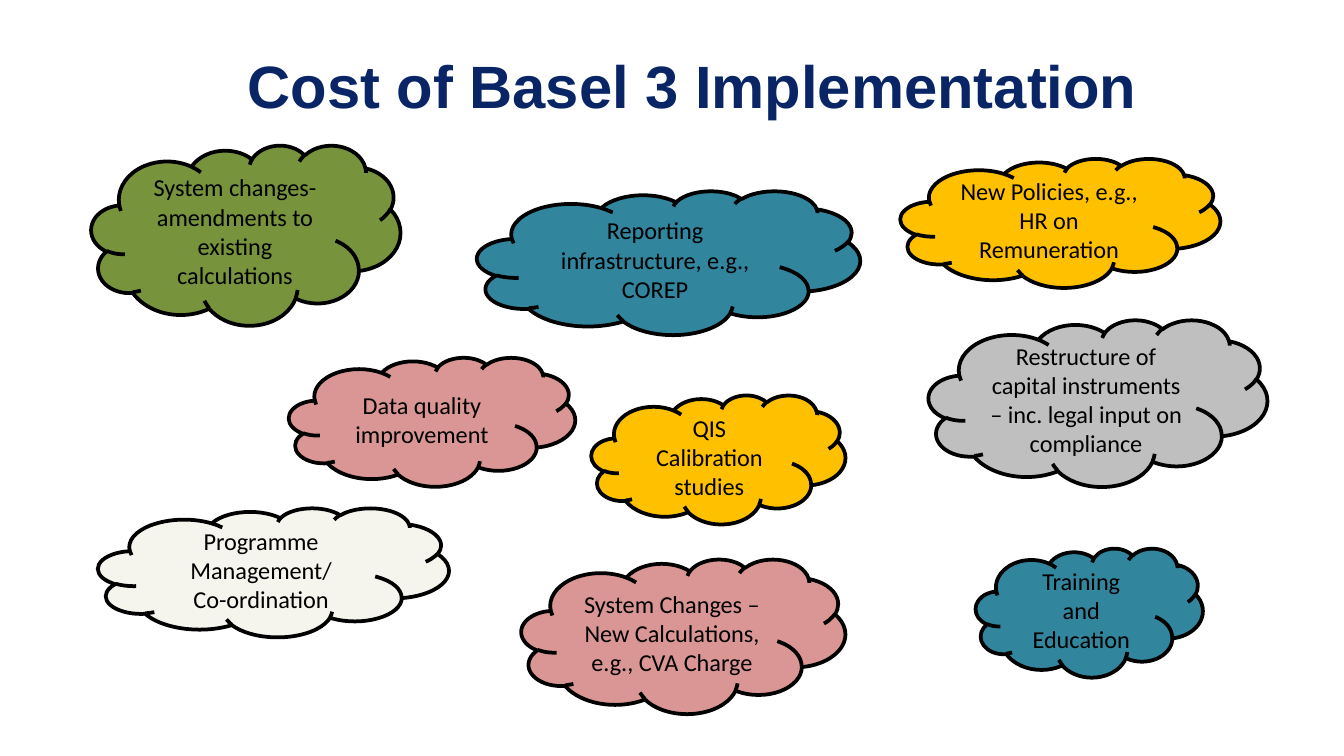
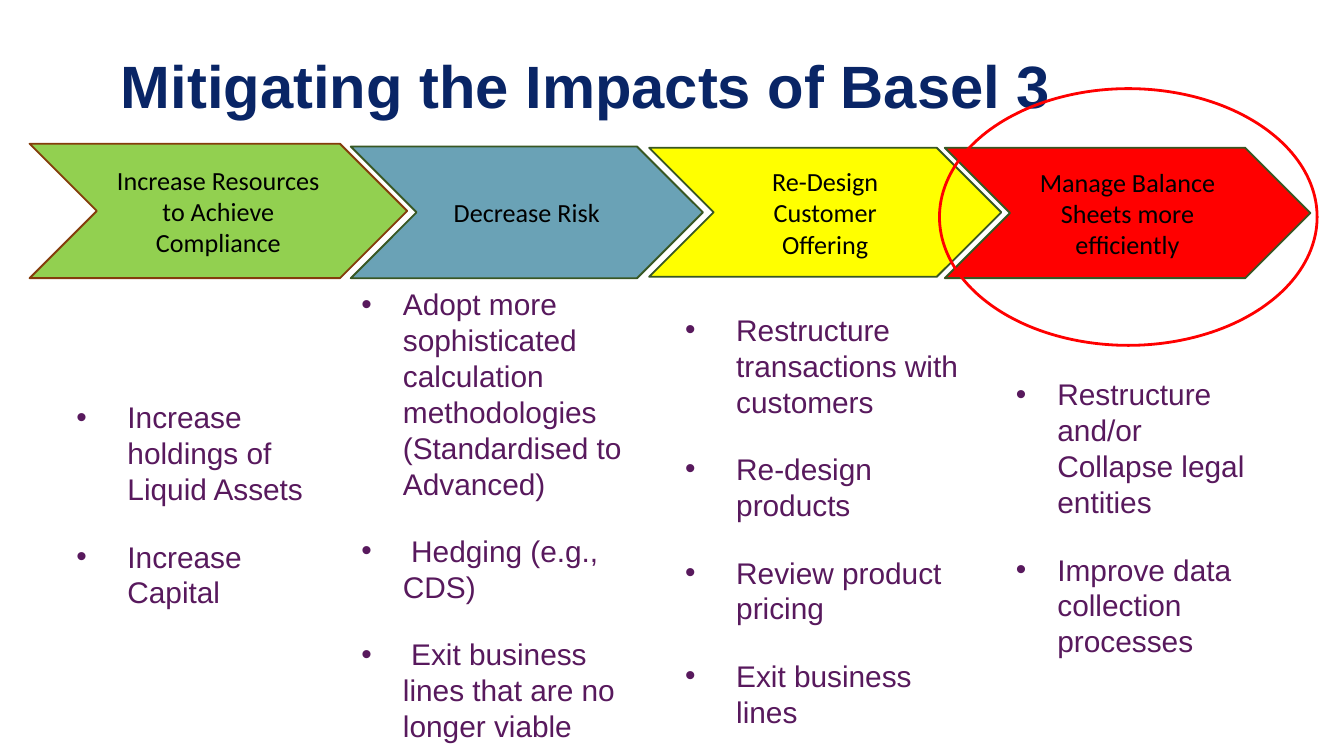
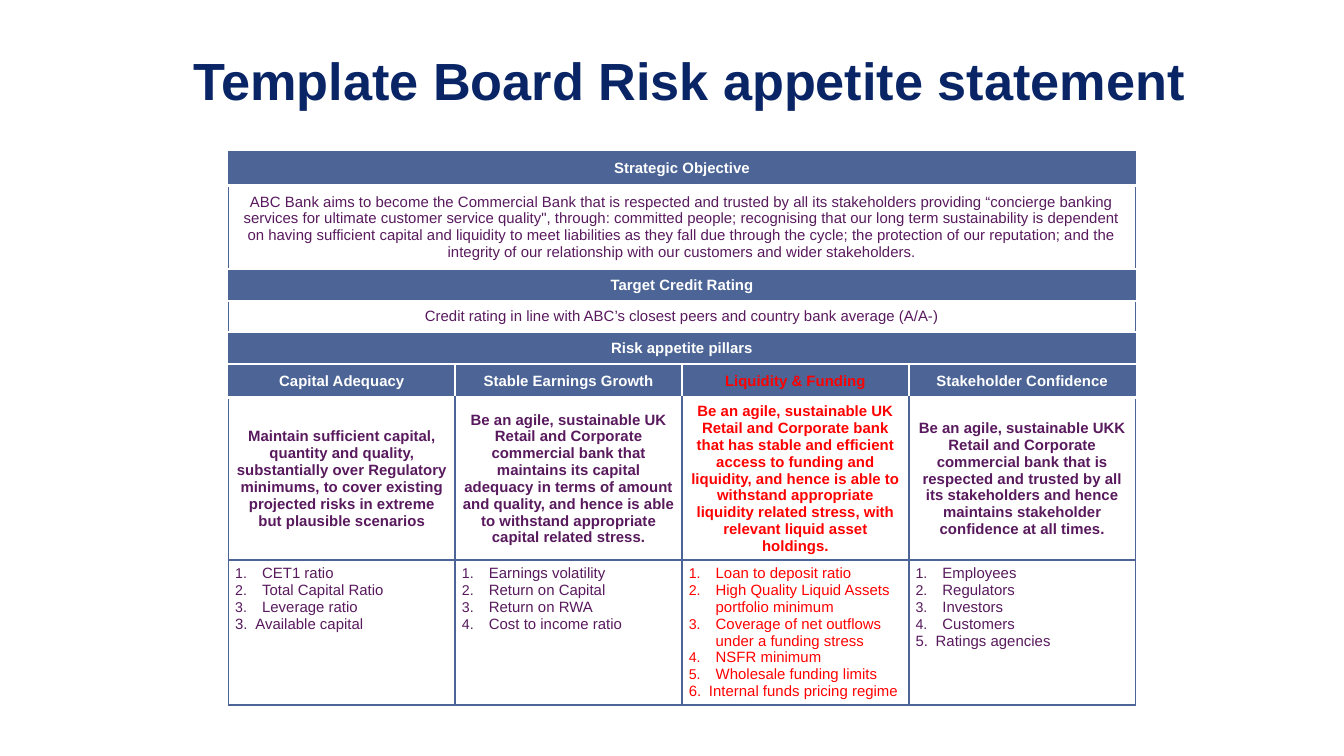
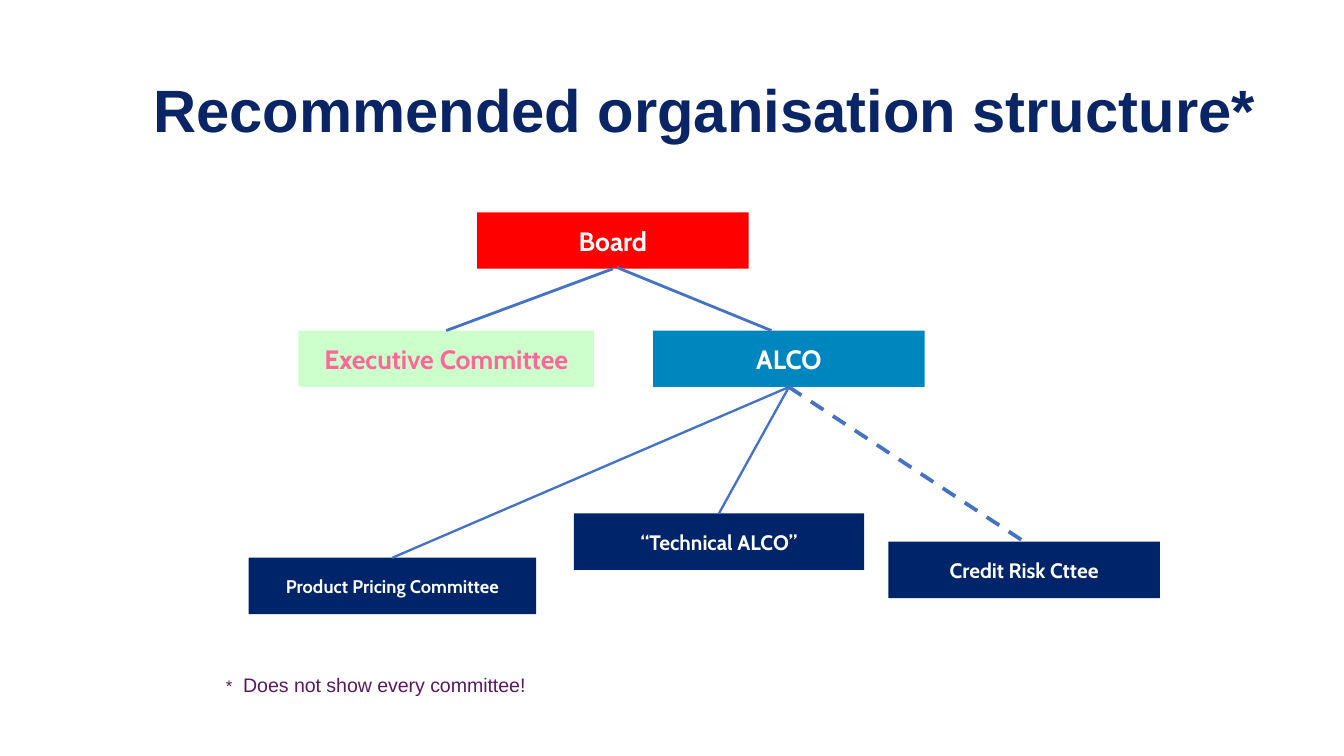
from typing import NamedTuple, Optional

from lxml.etree import SubElement
from pptx import Presentation
from pptx.dml.color import RGBColor
from pptx.enum.dml import MSO_LINE
from pptx.enum.shapes import MSO_CONNECTOR, MSO_SHAPE
from pptx.enum.text import MSO_ANCHOR, MSO_AUTO_SIZE, PP_ALIGN
from pptx.oxml.ns import qn
from pptx.util import Inches, Pt

# Colours and fonts
BLACK = RGBColor(0x00, 0x00, 0x00)
WHITE = RGBColor(0xFF, 0xFF, 0xFF)
RED = RGBColor(0xFF, 0x00, 0x00)
NAVY = RGBColor(0x09, 0x25, 0x66)
PLUM = RGBColor(0x58, 0x19, 0x5D)
SLATE = RGBColor(0x4C, 0x65, 0x96)
OLIVE = RGBColor(0x77, 0x93, 0x3C)
TEAL = RGBColor(0x31, 0x85, 0x9C)
AMBER = RGBColor(0xFF, 0xC0, 0x00)
ROSE = RGBColor(0xD9, 0x96, 0x94)
GREY = RGBColor(0xBF, 0xBF, 0xBF)
CREAM = RGBColor(0xF5, 0xF4, 0xED)
LIME = RGBColor(0x92, 0xD0, 0x50)
STEEL = RGBColor(0x6A, 0xA2, 0xB6)
YELLOW = RGBColor(0xFF, 0xFF, 0x00)
BROWN = RGBColor(0x84, 0x3C, 0x0B)
FOREST = RGBColor(0x38, 0x57, 0x23)
BLUE = RGBColor(0x00, 0x86, 0xBF)
INK = RGBColor(0x00, 0x24, 0x69)
MINT = RGBColor(0xCC, 0xFF, 0xCC)
PINK = RGBColor(0xFF, 0x66, 0x99)
SNOW = RGBColor(0xFD, 0xFD, 0xFE)
LINK = RGBColor(0x44, 0x72, 0xC4)
ARIAL, CALIBRI, CABIN = "Arial", "Calibri", "Cabin"


class Box(NamedTuple):
    left: float
    top: float
    width: float
    height: float


class Style(NamedTuple):
    size: float
    color: RGBColor
    font: str = ARIAL
    bold: bool = False


class Label(NamedTuple):
    text: str
    box: Box
    fill: RGBColor
    edge: Optional[RGBColor] = BLACK


class Points(NamedTuple):
    box: Box
    indent: float
    items: list


class Node(NamedTuple):
    text: str
    box: Box
    fill: RGBColor
    size: float
    color: RGBColor = SNOW


class Pillar(NamedTuple):
    name: str
    aim: str
    items: list
    typed: str = ""
    color: RGBColor = PLUM


def place(box: Box) -> list:
    return [Inches(side) for side in box]


def style_run(run, style: Style) -> None:
    font = run.font
    font.name, font.size, font.bold = style.font, Pt(style.size), style.bold
    font.color.rgb = style.color


def write(frame, text: str, style: Style, align=PP_ALIGN.CENTER) -> None:
    frame.text = text
    for para in frame.paragraphs:
        para.alignment = align
        for run in para.runs:
            style_run(run, style)


def hang(para, indent: float) -> object:
    props = para._p.get_or_add_pPr()
    props.set("marL", str(Inches(indent)))
    props.set("indent", str(-Inches(indent)))
    return props


def add_page(deck, text: str, box: Box, size: float = 32,
             align=PP_ALIGN.CENTER, space: float = 1.0):
    slide = deck.slides.add_slide(deck.slide_layouts[5])
    title = slide.shapes.title
    title.left, title.top, title.width, title.height = place(box)
    frame = title.text_frame
    write(frame, text, Style(size, NAVY, bold=True), align)
    frame.word_wrap, frame.auto_size = True, MSO_AUTO_SIZE.NONE
    frame.vertical_anchor = MSO_ANCHOR.MIDDLE
    frame.paragraphs[0].line_spacing = space
    return slide


def add_form(slide, kind, box: Box, fill=None, edge=None, width: float = 1):
    form = slide.shapes.add_shape(kind, *place(box))
    form.shadow.inherit = False
    if fill is None:
        form.fill.background()
    else:
        form.fill.solid()
        form.fill.fore_color.rgb = fill
    if edge is None:
        form.line.fill.background()
    else:
        form.line.color.rgb, form.line.width = edge, Pt(width)
    return form


def add_label(slide, kind, label: Label, size: float, width: float) -> None:
    form = add_form(slide, kind, label.box, label.fill, label.edge, width)
    frame = form.text_frame
    frame.word_wrap, frame.vertical_anchor = True, MSO_ANCHOR.MIDDLE
    frame.margin_left = frame.margin_right = Inches(0.11)
    write(frame, label.text, Style(size, BLACK, CALIBRI))


# Slide 1: cost clouds
CLOUDS = [
    Label("System changes- amendments to existing calculations",
          Box(0.68, 1.08, 2.3, 1.34), OLIVE),
    Label("Reporting infrastructure, e.g., COREP",
          Box(3.55, 1.42, 2.85, 1.07), TEAL),
    Label("New Policies, e.g., HR on Remuneration",
          Box(6.7, 1.18, 2.38, 0.96), AMBER),
    Label("Data quality improvement", Box(2.15, 2.66, 2.13, 0.96), ROSE),
    Label("QIS Calibration studies", Box(4.4, 2.94, 1.89, 0.96), AMBER),
    Label("Restructure of capital instruments – inc. legal input on compliance",
          Box(6.91, 2.38, 2.52, 1.24), GREY),
    Label("Programme Management/\nCo-ordination",
          Box(0.73, 3.78, 2.61, 0.96), CREAM),
    Label("System Changes – New Calculations, e.g., CVA Charge",
          Box(3.88, 4.16, 2.41, 1.15), ROSE),
    Label("Training and Education", Box(7.26, 4.08, 1.69, 0.96), TEAL),
]


def draw_costs(deck) -> None:
    slide = add_page(deck, "Cost of Basel 3 Implementation",
                     Box(0.11, 0.31, 10.09, 0.64))
    for cloud in CLOUDS:
        add_label(slide, MSO_SHAPE.CLOUD, cloud, 13, 2)


# Slide 2: chevrons and their bullet lists
STEPS = [
    Label("Increase Resources to Achieve Compliance",
          Box(0.22, 1.07, 2.81, 1), LIME, BROWN),
    Label("Decrease Risk", Box(2.61, 1.09, 2.62, 0.98), STEEL, FOREST),
    Label("Re-Design Customer Offering",
          Box(4.83, 1.1, 2.62, 0.96), YELLOW, FOREST),
    Label("Manage Balance Sheets more efficiently",
          Box(7.03, 1.1, 2.72, 0.97), RED, FOREST),
]
LISTS = [
    Points(Box(0.47, 2.92, 2.12, 1.72), 0.38,
           ["Increase holdings of Liquid Assets", "Increase Capital"]),
    Points(Box(2.59, 2.08, 2.32, 3.6), 0.31,
           ["Adopt more sophisticated calculation methodologies "
            "(Standardised to Advanced)",
            " Hedging (e.g., CDS)",
            " Exit business lines that are no longer viable"]),
    Points(Box(5, 2.27, 2.23, 3.33), 0.38,
           ["Restructure transactions with customers", "Re-design products",
            "Review product pricing", "Exit business lines"]),
    Points(Box(7.46, 2.75, 2.04, 2.26), 0.31,
           ["Restructure and/or Collapse legal entities",
            "Improve data collection processes"]),
]


def add_points(slide, points: Points) -> None:
    frame = slide.shapes.add_textbox(*place(points.box)).text_frame
    frame.word_wrap = True
    write(frame, "\n".join(points.items), Style(16, PLUM), PP_ALIGN.LEFT)
    for rank, para in enumerate(frame.paragraphs):
        props = hang(para, points.indent)
        SubElement(props, qn("a:buFont")).set("typeface", ARIAL)
        SubElement(props, qn("a:buChar")).set("char", "•")
        para.space_before = Pt(17 if rank else 0)


def draw_steps(deck) -> None:
    slide = add_page(deck, "Mitigating the Impacts of Basel 3",
                     Box(0.8, 0.31, 9.39, 0.64), align=PP_ALIGN.LEFT)
    for step in STEPS:
        add_label(slide, MSO_SHAPE.CHEVRON, step, 14, 1)
    add_form(slide, MSO_SHAPE.OVAL, Box(6.99, 0.66, 2.81, 1.91), None, RED, 1.5)
    for points in LISTS:
        add_points(slide, points)


# Slide 3: risk appetite table
BANDS = [
    ("Strategic Objective", True),
    ("ABC Bank aims to become the Commercial Bank that is respected and "
     "trusted by all its stakeholders providing “concierge banking services "
     "for ultimate customer service quality\", through: committed people; "
     "recognising that our long term sustainability is dependent on having "
     "sufficient capital and liquidity to meet liabilities as they fall due "
     "through the cycle; the protection of our reputation; and the integrity "
     "of our relationship with our customers and wider stakeholders.", False),
    ("Target Credit Rating", True),
    ("Credit rating in line with ABC’s closest peers and country bank "
     "average (A/A-)", False),
    ("Risk appetite pillars", True),
]
PILLARS = [
    Pillar("Capital Adequacy",
           "Maintain sufficient capital, quantity and quality, substantially "
           "over Regulatory minimums, to cover existing projected risks in "
           "extreme but plausible scenarios",
           ["CET1 ratio", "Total Capital Ratio", "Leverage ratio"],
           "3.\tAvailable capital"),
    Pillar("Stable Earnings Growth",
           "Be an agile, sustainable UK Retail and Corporate commercial bank "
           "that maintains its capital adequacy in terms of amount and "
           "quality, and hence is able to withstand appropriate capital "
           "related stress.",
           ["Earnings volatility", "Return on Capital", "Return on RWA",
            "Cost to income ratio"]),
    Pillar("Liquidity & Funding",
           "Be an agile, sustainable UK Retail and Corporate bank that has "
           "stable and efficient access to funding and liquidity, and hence "
           "is able to withstand appropriate liquidity related stress, with "
           "relevant liquid asset holdings.",
           ["Loan to deposit ratio", "High Quality Liquid Assets portfolio minimum",
            "Coverage of net outflows under a funding stress", "NSFR minimum",
            "Wholesale funding limits"],
           "6.\tInternal funds pricing regime", RED),
    Pillar("Stakeholder Confidence",
           "Be an agile, sustainable UKK Retail and Corporate commercial bank "
           "that is respected and trusted by all its stakeholders and hence "
           "maintains stakeholder confidence at all times.",
           ["Employees", "Regulators", "Investors", "Customers"],
           "5.\tRatings agencies"),
]
ROWS = [0.25, 0.62, 0.24, 0.23, 0.24, 0.25, 1.18, 0.96]


def set_cell(cell, text: str, style: Style, sides: list, fill=None,
             align=PP_ALIGN.CENTER, anchor=MSO_ANCHOR.MIDDLE) -> None:
    """Sides are the border colours: left, right, top, bottom."""
    props = cell._tc.get_or_add_tcPr()
    for side, color in zip("LRTB", sides):
        width = Pt(1.5 if color == WHITE else 1)
        edge = SubElement(props, qn(f"a:ln{side}"), w=str(width))
        paint = SubElement(edge, qn("a:solidFill"))
        SubElement(paint, qn("a:srgbClr")).set("val", str(color))
    if fill is None:
        cell.fill.background()
    else:
        cell.fill.solid()
        cell.fill.fore_color.rgb = fill
    cell.margin_left = cell.margin_right = Inches(0.05)
    cell.margin_top = cell.margin_bottom = Inches(0.04)
    cell.vertical_anchor = anchor
    write(cell.text_frame, text, style, align)


def number(cell, pillar: Pillar) -> None:
    for rank, para in enumerate(cell.text_frame.paragraphs):
        if rank < len(pillar.items):
            props = hang(para, 0.2)
            SubElement(props, qn("a:buSzPct")).set("val", "95000")
            SubElement(props, qn("a:buFont")).set("typeface", ARIAL)
            SubElement(props, qn("a:buAutoNum")).set("type", "arabicPeriod")
        else:
            hang(para, 0.15)


def draw_table(deck) -> None:
    slide = add_page(deck, "Template Board Risk appetite statement",
                     Box(0.64, 0.12, 8.97, 1.01), 28, space=0.9)
    box = Box(1.7, 1.13, 6.75, sum(ROWS))
    table = slide.shapes.add_table(len(ROWS), len(PILLARS), *place(box)).table
    table.first_row = table.horz_banding = False
    for row, height in zip(table.rows, ROWS):
        row.height = Inches(height)
    last = len(PILLARS) - 1

    # Full-width bands
    for row, (text, head) in enumerate(BANDS):
        table.cell(row, 0).merge(table.cell(row, last))
        style = Style(8, WHITE if head else PLUM, bold=head)
        sides = [SLATE, SLATE, WHITE if row else SLATE, WHITE]
        for col in range(last + 1):
            set_cell(table.cell(row, col), "" if col else text, style, sides,
                     SLATE if head else None)

    # One column for each pillar
    top = len(BANDS)
    for col, pillar in enumerate(PILLARS):
        name, aim, items = (table.cell(top + step, col) for step in range(3))
        tint = RED if pillar.color == RED else WHITE
        sides = [WHITE if col else SLATE, SLATE if col == last else WHITE,
                 WHITE, WHITE]
        set_cell(name, pillar.name, Style(8, tint, bold=True), sides, SLATE)
        set_cell(aim, pillar.aim, Style(8, pillar.color, bold=True),
                 [SLATE, SLATE, WHITE, SLATE])
        lines = pillar.items + ([pillar.typed] if pillar.typed else [])
        set_cell(items, "\n".join(lines), Style(8, pillar.color), [SLATE] * 4,
                 align=PP_ALIGN.LEFT, anchor=MSO_ANCHOR.TOP)
        number(items, pillar)


# Slide 4: committee chart
NODES = {
    "board": Node("Board", Box(3.55, 1.58, 2.02, 0.42), RED, 14.2),
    "exec": Node("Executive Committee", Box(2.22, 2.46, 2.2, 0.42),
                 MINT, 14.2, PINK),
    "alco": Node("ALCO", Box(4.86, 2.46, 2.02, 0.42), BLUE, 14.2),
    "price": Node("Product Pricing Committee", Box(1.85, 4.15, 2.14, 0.42),
                  INK, 9.8),
    "tech": Node("“Technical ALCO”", Box(4.27, 3.82, 2.16, 0.42), INK, 11.2),
    "credit": Node("Credit Risk Cttee", Box(6.61, 4.03, 2.02, 0.42), INK, 11.2),
}
LINKS = [("board", "exec", 1.5), ("alco", "price", 1.25),
         ("alco", "tech", 1.25), ("alco", "credit", 2)]


def add_node(slide, node: Node):
    form = add_form(slide, MSO_SHAPE.RECTANGLE, node.box, node.fill)
    frame = form.text_frame
    frame.word_wrap, frame.vertical_anchor = False, MSO_ANCHOR.MIDDLE
    frame.margin_left = frame.margin_right = Inches(0.04)
    frame.margin_top = frame.margin_bottom = Inches(0.04)
    write(frame, node.text, Style(node.size, node.color, CABIN, True))
    return form


def add_line(slide, ends: Box, width: float):
    """Ends hold the start x, start y, end x and end y."""
    line = slide.shapes.add_connector(MSO_CONNECTOR.STRAIGHT, *place(ends))
    line.line.color.rgb, line.line.width = LINK, Pt(width)
    SubElement(line._element.spPr, qn("a:effectLst"))
    return line


def draw_chart(deck) -> None:
    slide = add_page(deck, "Recommended organisation structure*",
                     Box(0.8, 0.34, 8.89, 1.01), space=0.9)
    forms = {key: add_node(slide, node) for key, node in NODES.items()}
    for start, end, width in LINKS:
        line = add_line(slide, Box(0, 0, 1, 1), width)
        line.begin_connect(forms[start], 2)
        line.end_connect(forms[end], 0)
        if end == "credit":
            line.line.dash_style = MSO_LINE.DASH
    add_line(slide, Box(4.59, 1.99, 5.74, 2.46), 1.5)

    # Footnote
    frame = slide.shapes.add_textbox(*place(Box(1.6, 4.82, 4.65, 0.44))).text_frame
    frame.word_wrap = True
    frame.margin_left = frame.margin_right = Inches(0.08)
    frame.margin_top = frame.margin_bottom = Inches(0.04)
    for text, size in [("*", 9), (" ", 21),
                       ("Does not show every committee!", 10.5)]:
        run = frame.paragraphs[0].add_run()
        run.text = text
        style_run(run, Style(size, PLUM))


def main() -> None:
    deck = Presentation()
    # Widescreen, 16 to 9
    deck.slide_width, deck.slide_height = Inches(10), Inches(10 * 9 / 16)
    for draw in (draw_costs, draw_steps, draw_table, draw_chart):
        draw(deck)
    deck.save("out.pptx")


if __name__ == "__main__":
    main()
